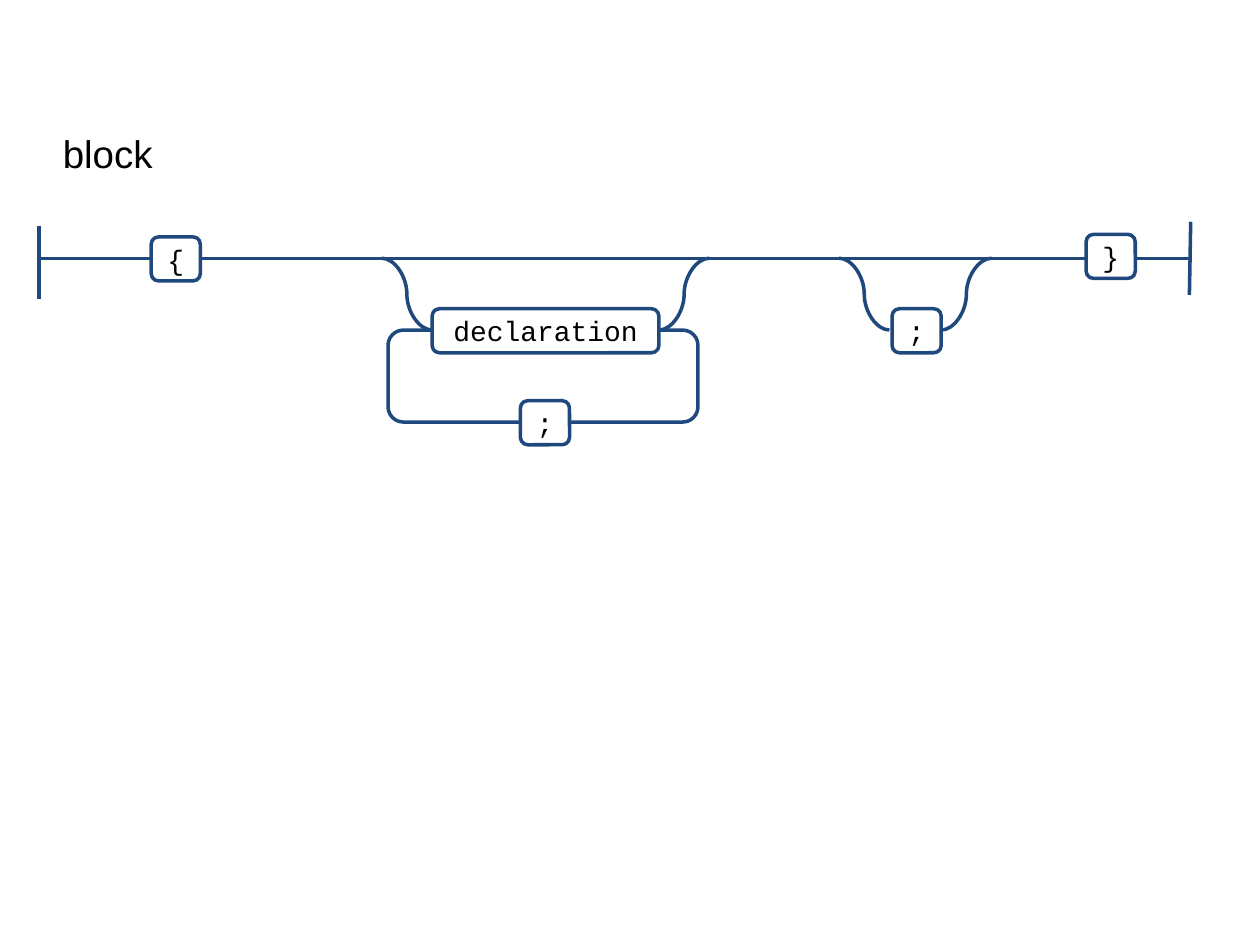
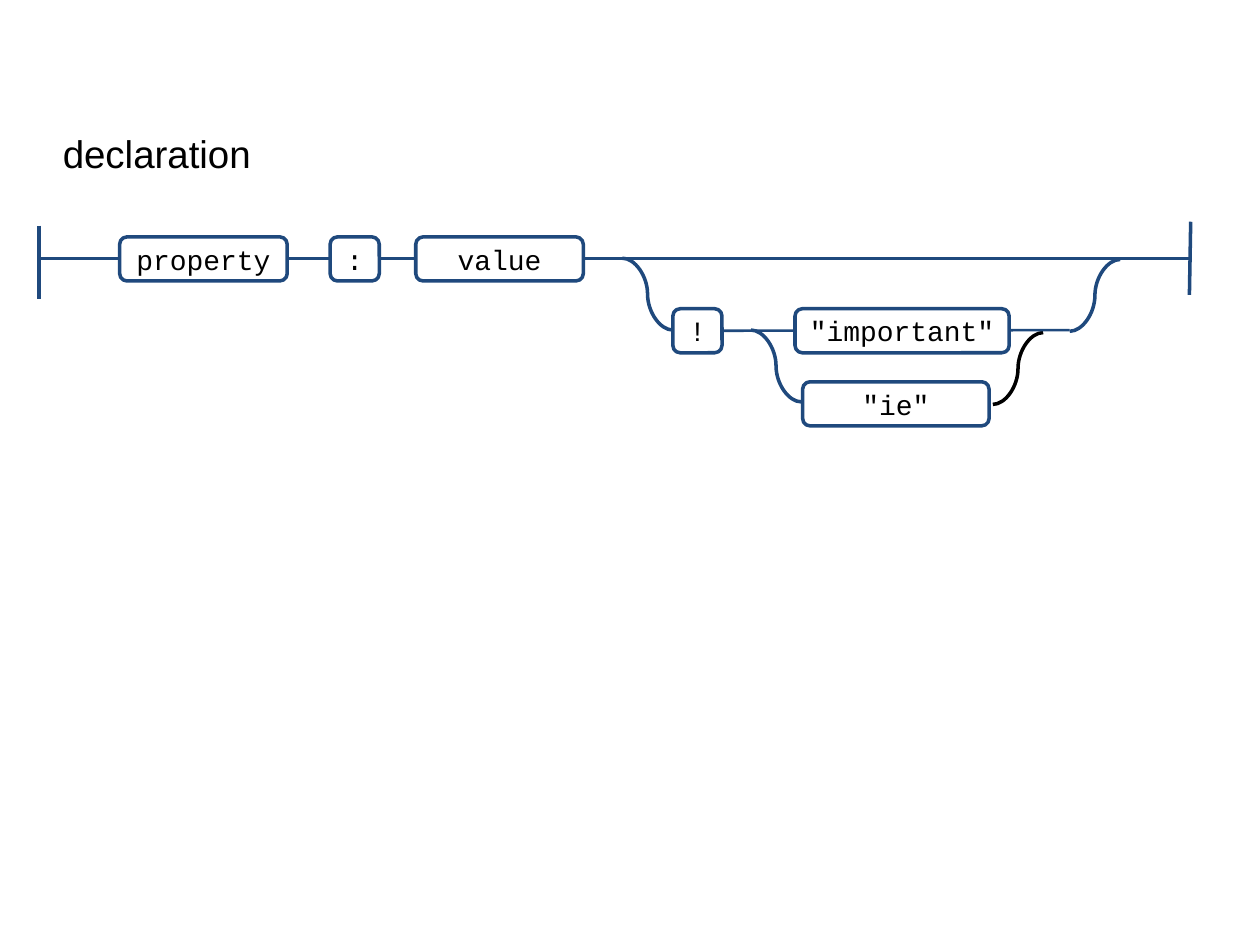
from dataclasses import dataclass
from pptx import Presentation, util as u
from pptx.dml.color import RGBColor
from pptx.enum import shapes, text
from pptx.oxml import xmlchemy as xml


@dataclass(frozen=True)
class Theme:
    ink: RGBColor = RGBColor(0x1F, 0x49, 0x7D)
    black: RGBColor = RGBColor(0, 0, 0)
    white: RGBColor = RGBColor(255, 255, 255)
    head: str = "Arial"
    code: str = "Courier New"
    big: int = 22
    small: int = 16
    thin: float = 1.5
    thick: float = 2


T = Theme()
LEFT, RIGHT = 0.31, 9.44
MAIN, LOWER = 2.05, 2.62
STEP_W, STEP_H = 0.4, 0.57
BOX_H, CHAR_W = 0.35, 0.39


def write(frame, words, font, size):
    run = frame.paragraphs[0].add_run()
    run.text = words
    run.font.name = font
    run.font.size = u.Pt(size)
    run.font.color.rgb = T.black


def title(slide, words):
    box = slide.shapes.add_textbox(*map(u.Inches, (0.4, 0.98, 5.89, 0.47)))
    frame = box.text_frame
    frame.word_wrap = True
    frame.auto_size = text.MSO_AUTO_SIZE.SHAPE_TO_FIT_TEXT
    write(frame, words, T.head, T.big)


def box(slide, left, top, words="", width=CHAR_W, height=BOX_H):
    kind = shapes.MSO_SHAPE.FLOWCHART_ALTERNATE_PROCESS
    node = slide.shapes.add_shape(kind, *map(u.Inches, (left, top, width, height)))
    node.shadow.inherit = False
    node.fill.solid()
    node.fill.fore_color.rgb = T.white
    node.line.color.rgb = T.ink
    node.line.width = u.Pt(T.thick)
    if words:
        frame = node.text_frame
        frame.word_wrap = True
        frame.vertical_anchor = text.MSO_ANCHOR.MIDDLE
        frame.paragraphs[0].alignment = text.PP_ALIGN.CENTER
        write(frame, words, T.code, T.small)
    return node


def link(slide, start, end, width=T.thick, color=T.ink,
         kind=shapes.MSO_CONNECTOR.STRAIGHT):
    line = slide.shapes.add_connector(kind, *map(u.Inches, start + end))
    line.line.color.rgb = color
    line.line.width = u.Pt(width)
    props = line._element.spPr
    props.append(xml.OxmlElement("a:effectLst"))
    return line


def fall(slide, x, y):
    link(slide, (x + STEP_W, y + STEP_H), (x, y),
         kind=shapes.MSO_CONNECTOR.CURVE)


def rise(slide, x, y, color=T.ink):
    link(slide, (x, y + STEP_H), (x + STEP_W, y), color=color,
         kind=shapes.MSO_CONNECTOR.CURVE)


def rail(slide):
    link(slide, (LEFT, MAIN), (RIGHT, MAIN), T.thin)
    link(slide, (LEFT, 1.79), (LEFT, 2.37))
    link(slide, (RIGHT + 0.01, 1.76), (RIGHT, 2.34))


def block(slide):
    box(slide, 3.08, LOWER, width=2.46, height=0.73)
    box(slide, 3.43, 2.45, "declaration", 1.8)
    rail(slide)
    for x in (3.03, 6.66):
        fall(slide, x, MAIN)
    for x in (5.23, 7.47):
        rise(slide, x, MAIN)
    for x, y, sign in ((1.2, 1.88, "{"), (8.62, 1.86, "}"),
                       (7.08, 2.45, ";"), (4.13, 3.18, ";")):
        box(slide, x, y, sign)
    title(slide, "block")


def rule(slide):
    rail(slide)
    fall(slide, 4.94, MAIN)
    rise(slide, 8.49, 2.06)
    fall(slide, 5.96, LOWER)
    rise(slide, 7.88, 2.64, T.black)
    box(slide, 0.95, 1.88, "property", 1.33)
    box(slide, 2.62, 1.88, ":")
    box(slide, 3.3, 1.88, "value", 1.33)
    bang = box(slide, 5.34, 2.45, "!")
    track = link(slide, (5.73, LOWER), (8.49, LOWER), T.thin)
    track.begin_connect(bang, 3)
    box(slide, 6.37, 3.03, '"ie"', 1.48)
    box(slide, 6.31, 2.45, '"important"', 1.7)
    title(slide, "declaration")


def main():
    deck = Presentation()
    deck.slide_width, deck.slide_height = u.Inches(10), u.Inches(7.5)
    for draw in (block, rule):
        draw(deck.slides.add_slide(deck.slide_layouts[6]))
    deck.save("out.pptx")


if __name__ == "__main__":
    main()
